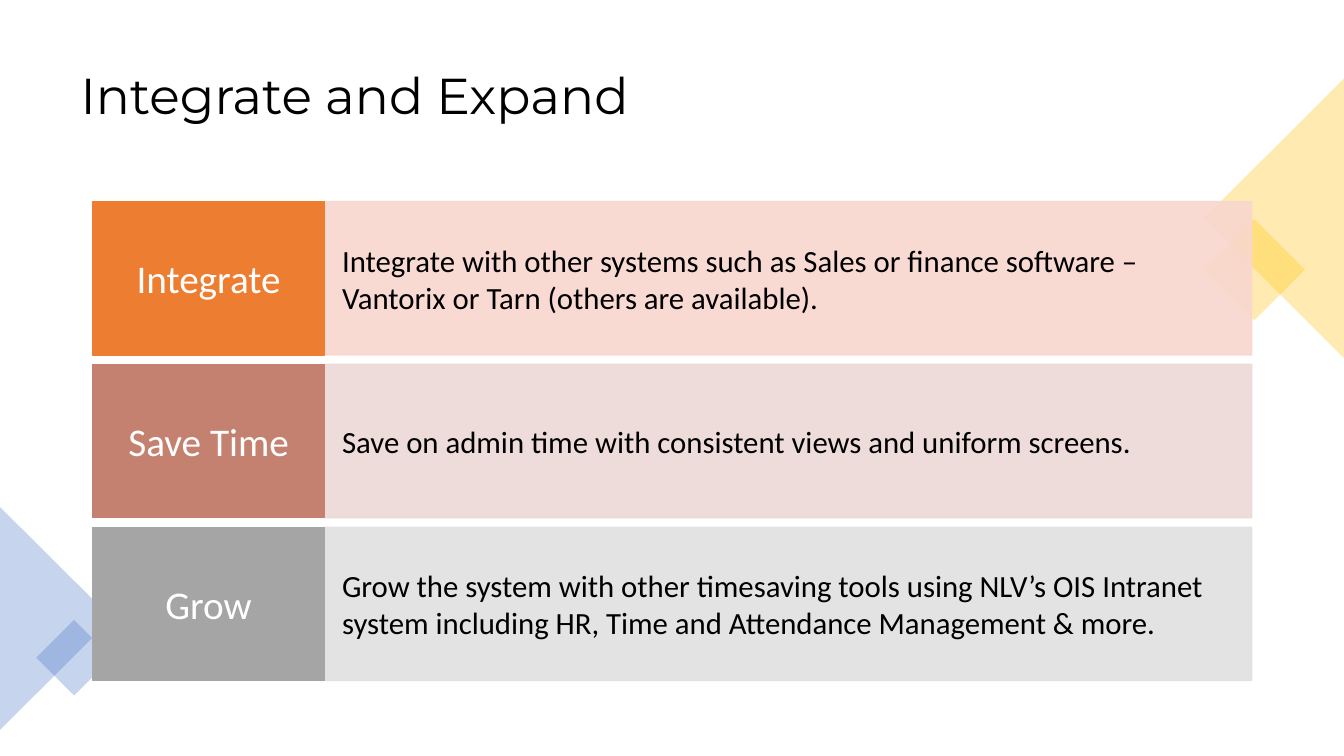
from dataclasses import dataclass

from pptx import Presentation
from pptx.dml.color import RGBColor
from pptx.enum.shapes import MSO_SHAPE
from pptx.enum.text import MSO_ANCHOR, MSO_AUTO_SIZE, PP_ALIGN
from pptx.oxml.ns import qn
from pptx.oxml.xmlchemy import OxmlElement
from pptx.shapes.autoshape import Shape
from pptx.slide import Slide
from pptx.util import Pt

BLACK = RGBColor(0x00, 0x00, 0x00)
WHITE = RGBColor(0xFF, 0xFF, 0xFF)
GOLD = RGBColor(0xFF, 0xC0, 0x00)
BLUE = RGBColor(0x44, 0x72, 0xC4)
ORANGE = RGBColor(0xED, 0x7D, 0x31)
PALE_ORANGE = RGBColor(0xF8, 0xD7, 0xCE)
CLAY = RGBColor(0xC4, 0x81, 0x70)
PALE_CLAY = RGBColor(0xED, 0xD9, 0xD7)
GREY = RGBColor(0xA5, 0xA5, 0xA5)
PALE_GREY = RGBColor(0xE1, 0xE1, 0xE1)

ROWS_LEFT, ROWS_TOP = 66.2, 144
ROW_HEIGHT, ROW_PITCH = 109.5, 116.3
LABEL_WIDTH, DETAIL_WIDTH = 165.6, 662.4


@dataclass(frozen=True)
class Box:
    left: float
    top: float
    width: float
    height: float


@dataclass(frozen=True)
class Ornament:
    kind: MSO_SHAPE
    box: Box
    rotation: float
    color: RGBColor


@dataclass(frozen=True)
class Row:
    label: str
    detail: str
    color: RGBColor
    pale: RGBColor


@dataclass(frozen=True)
class TextStyle:
    size: float
    color: RGBColor
    align: PP_ALIGN
    inset_x: float
    inset_y: float


LABEL_STYLE = TextStyle(28, WHITE, PP_ALIGN.CENTER, 8.6, 10.8)
DETAIL_STYLE = TextStyle(22, BLACK, PP_ALIGN.LEFT, 12.6, 28)

ORNAMENTS = [
    Ornament(MSO_SHAPE.RECTANGLE, Box(870.5, 167, 51.1, 51.1), 45, GOLD),
    Ornament(MSO_SHAPE.ISOSCELES_TRIANGLE, Box(810.2, 105.9, 199.4, 100), 270, GOLD),
    Ornament(MSO_SHAPE.ISOSCELES_TRIANGLE, Box(-39.6, 401.8, 159.1, 79.9), 90, BLUE),
    Ornament(MSO_SHAPE.RECTANGLE, Box(33.8, 450.7, 38.2, 38.2), 45, BLUE),
]

ROWS = [
    Row("Integrate",
        "Integrate with other systems such as Sales or finance software – "
        "Vantorix or Tarn (others are available).",
        ORANGE, PALE_ORANGE),
    Row("Save Time",
        "Save on admin time with consistent views and uniform screens.",
        CLAY, PALE_CLAY),
    Row("Grow",
        "Grow the system with other timesaving tools using NLV’s OIS Intranet "
        "system including HR, Time and Attendance Management & more.",
        GREY, PALE_GREY),
]


def add_filled(s: Slide, kind: MSO_SHAPE, box: Box, color: RGBColor,
               opacity: int = 100, outlined: bool = False) -> Shape:
    """Add a shadowless shape; opacity is a percentage for fill and outline."""
    sp = s.shapes.add_shape(kind, Pt(box.left), Pt(box.top), Pt(box.width), Pt(box.height))
    sp.shadow.inherit = False
    sp.fill.solid()
    sp.fill.fore_color.rgb = color
    if outlined:
        sp.line.color.rgb = color
        sp.line.width = Pt(1)
    else:
        sp.line.fill.background()
    if opacity < 100:
        for clr in sp._element.spPr.iter(qn("a:srgbClr")):
            alpha = OxmlElement("a:alpha")
            alpha.set("val", str(opacity * 1000))
            clr.append(alpha)
    return sp


def write_text(sp: Shape, text: str, style: TextStyle) -> None:
    tf = sp.text_frame
    tf.word_wrap = True
    tf.vertical_anchor = MSO_ANCHOR.MIDDLE
    tf.margin_left = tf.margin_right = Pt(style.inset_x)
    tf.margin_top = tf.margin_bottom = Pt(style.inset_y)
    p = tf.paragraphs[0]
    p.alignment = style.align
    r = p.add_run()
    r.text = text
    r.font.name = "Calibri"
    r.font.size = Pt(style.size)
    r.font.color.rgb = style.color


def add_title(s: Slide, text: str) -> None:
    sp = s.shapes.title
    sp.left, sp.top, sp.width, sp.height = Pt(50.4), Pt(25.2), Pt(859), Pt(89.3)
    tf = sp.text_frame
    tf.word_wrap = True
    tf.auto_size = MSO_AUTO_SIZE.NONE
    tf.vertical_anchor = MSO_ANCHOR.MIDDLE
    p = tf.paragraphs[0]
    p.alignment = PP_ALIGN.LEFT
    p.line_spacing = 0.9
    r = p.add_run()
    r.text = text
    r.font.name = "Montserrat"
    r.font.size = Pt(36)
    r.font.color.rgb = BLACK


def add_row(s: Slide, row: Row, top: float) -> None:
    detail_box = Box(ROWS_LEFT + LABEL_WIDTH, top, DETAIL_WIDTH, ROW_HEIGHT)
    detail = add_filled(s, MSO_SHAPE.RECTANGLE, detail_box, row.pale, 90, outlined=True)
    write_text(detail, row.detail, DETAIL_STYLE)
    label_box = Box(ROWS_LEFT, top, LABEL_WIDTH, ROW_HEIGHT)
    label = add_filled(s, MSO_SHAPE.RECTANGLE, label_box, row.color, outlined=True)
    write_text(label, row.label, LABEL_STYLE)


def main() -> None:
    prs = Presentation()
    prs.slide_width, prs.slide_height = Pt(960), Pt(540)
    s = prs.slides.add_slide(prs.slide_layouts.get_by_name("Title Only"))
    add_title(s, "Integrate and Expand")
    for o in ORNAMENTS:
        sp = add_filled(s, o.kind, o.box, o.color, 30)
        sp.rotation = o.rotation
    for i, row in enumerate(ROWS):
        add_row(s, row, ROWS_TOP + i * ROW_PITCH)
    prs.save("out.pptx")


if __name__ == "__main__":
    main()
